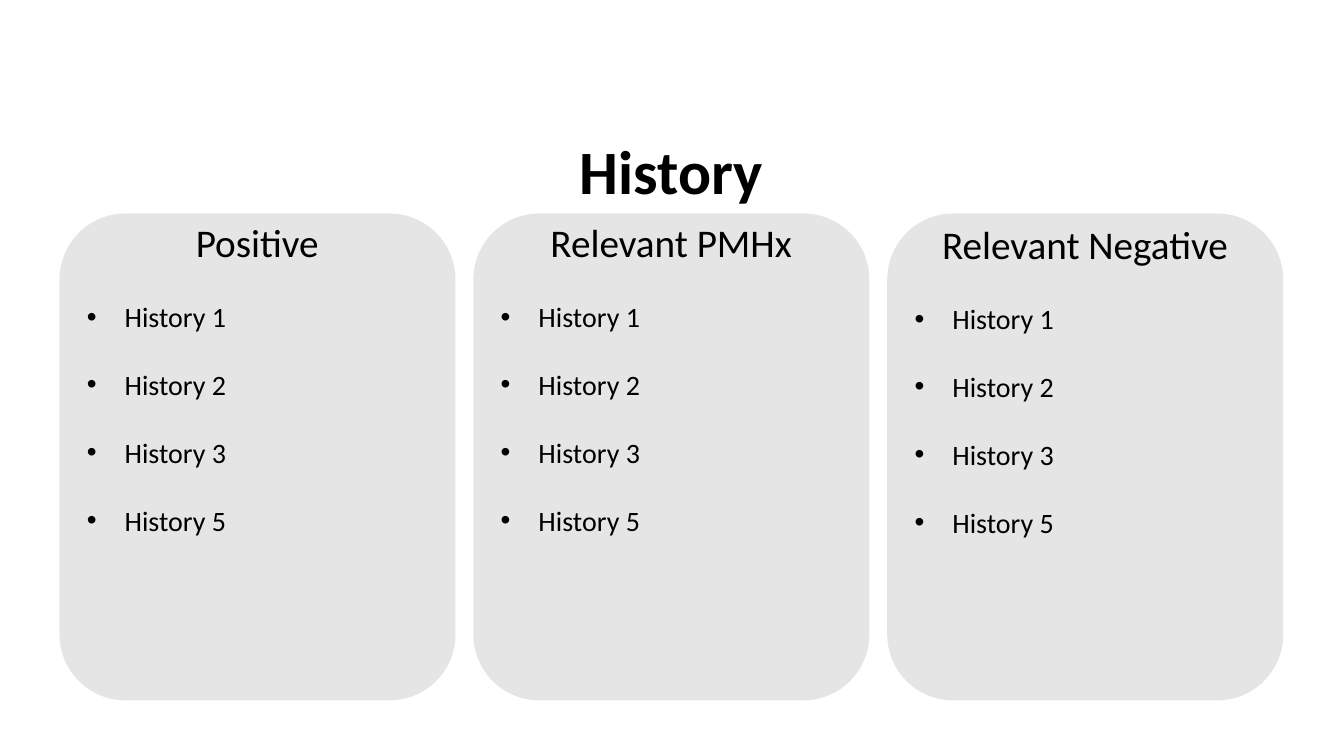
from lxml import etree
from pptx import Presentation
from pptx.dml.color import RGBColor
from pptx.enum.shapes import MSO_SHAPE
from pptx.enum.text import MSO_ANCHOR, MSO_AUTO_SIZE, PP_ALIGN
from pptx.oxml.ns import qn
from pptx.util import Cm, Pt

ROUNDED = MSO_SHAPE.ROUNDED_RECTANGLE
MIDDLE = MSO_ANCHOR.MIDDLE
GROW = MSO_AUTO_SIZE.SHAPE_TO_FIT_TEXT
CENTER = PP_ALIGN.CENTER
BLACK = RGBColor(0x00, 0x00, 0x00)
FONT = "Calibri"

CARD_LEFT, CARD_TOP = 1.5, 5.38
CARD_WIDTH, CARD_HEIGHT = 9.98, 12.27
CARD_PITCH = 10.43
TEXT_INSET = 0.44
INDENT = Cm(0.95)

COLUMNS = [
    ("Positive", 5.38),
    ("Relevant PMHx", 5.38),
    ("Relevant Negative", 5.43),
]
ITEMS = ["History 1", "History 2", "History 3", "History 5"]


def set_font(para, size, bold=False):
    para.font.name = FONT
    para.font.size = Pt(size)
    para.font.bold = bold
    para.font.color.rgb = BLACK


def add_bullet(para):
    properties = para._p.get_or_add_pPr()
    properties.set("marL", str(INDENT))
    properties.set("indent", str(-INDENT))
    etree.SubElement(properties, qn("a:buFont"), typeface="Arial")
    etree.SubElement(properties, qn("a:buChar"), char="•")


deck = Presentation()
deck.slide_width = Cm(33.87)
deck.slide_height = Cm(19.05)
page = deck.slides.add_slide(deck.slide_layouts[6])

title = page.shapes.add_textbox(Cm(2.32), Cm(3.4), Cm(29.21), Cm(1.98))
title.text_frame.word_wrap = True
title.text_frame.vertical_anchor = MIDDLE
para = title.text_frame.paragraphs[0]
para.text = "History"
para.alignment = CENTER
para.line_spacing = 0.9
set_font(para, 44, bold=True)

for index, (heading, text_top) in enumerate(COLUMNS):
    left = CARD_LEFT + index * CARD_PITCH

    card = page.shapes.add_shape(
        ROUNDED, Cm(left), Cm(CARD_TOP), Cm(CARD_WIDTH), Cm(CARD_HEIGHT)
    )
    card.shadow.inherit = False
    card.line.fill.background()
    card.fill.solid()
    card.fill.fore_color.rgb = BLACK
    color = card._element.spPr.find(qn("a:solidFill")).find(qn("a:srgbClr"))
    etree.SubElement(color, qn("a:alpha"), val="10000")

    box = page.shapes.add_textbox(
        Cm(left + TEXT_INSET), Cm(text_top), Cm(9.09), Cm(8.28)
    )
    frame = box.text_frame
    frame.word_wrap = True
    frame.auto_size = GROW
    para = frame.paragraphs[0]
    para.text = heading
    para.alignment = CENTER
    set_font(para, 28)

    for item in ITEMS:
        para = frame.add_paragraph()
        para.text = item
        para.space_before = Pt(24.4)
        add_bullet(para)
        set_font(para, 20)

deck.save("out.pptx")
